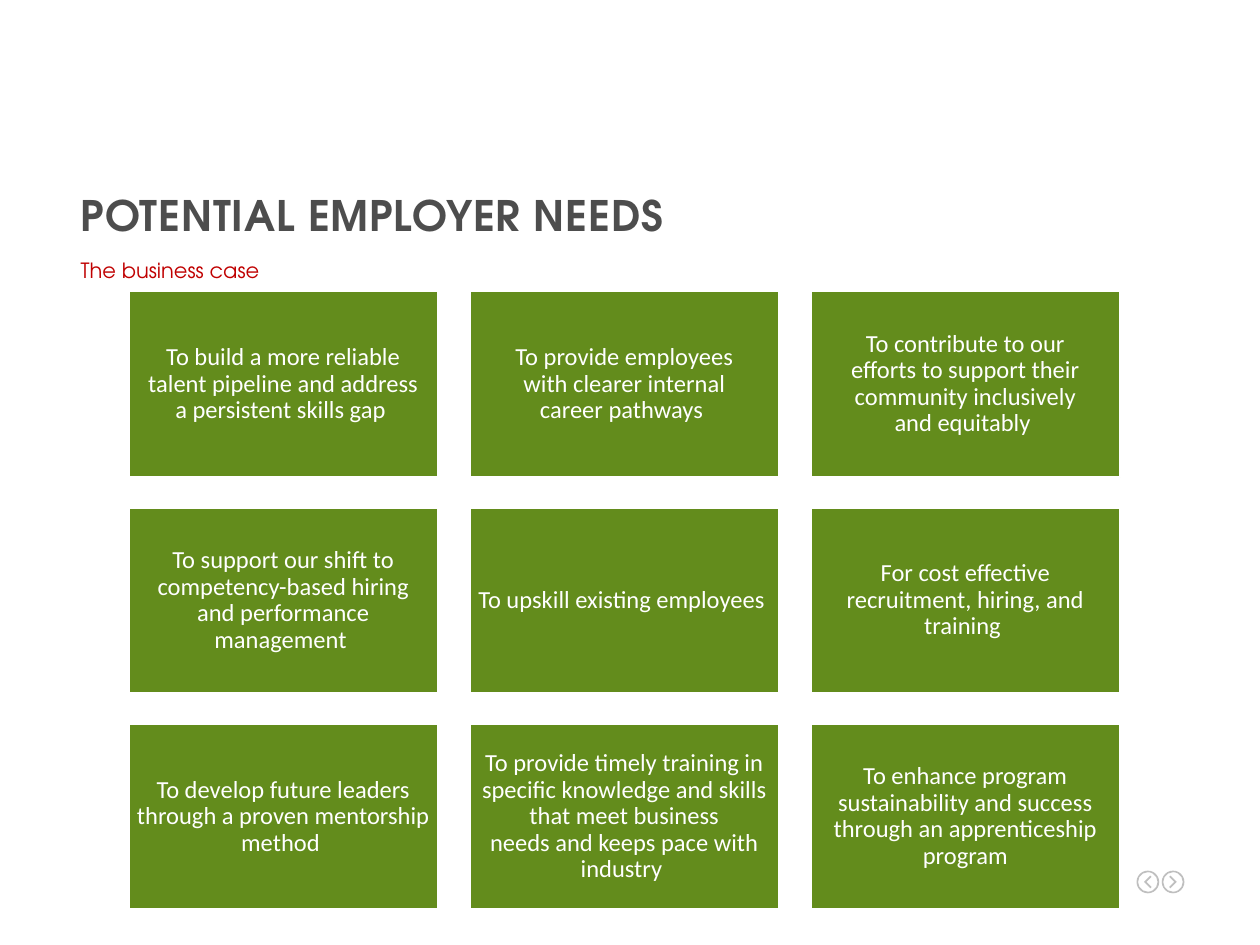
from pptx import Presentation
from pptx.dml.color import RGBColor
from pptx.enum.shapes import MSO_SHAPE
from pptx.enum.text import MSO_ANCHOR, MSO_AUTO_SIZE, PP_ALIGN
from pptx.util import Inches, Pt

HEADING_FONT = "TeX Gyre Adventor"
BODY_FONT = "Calibri"
GREEN, WHITE, GREY, RED, SILVER = "638C1C", "FFFFFF", "4D4D4D", "C00000", "BFBFBF"

HARD_SPACE_MARK = "~"
NEEDS = [
    "To build~a more reliable talent pipeline~and~address a~persistent skills~gap~",
    "To provide employees with~clearer~internal career~pathways~",
    "To contribute to~our efforts~to support their community inclusively and~equitably~",
    "To support~our~shift to competency-based hiring and performance management~",
    "To upskill existing employees~",
    "For cost effective recruitment, hiring, and training~",
    "To develop future leaders through~a proven mentorship method~",
    "To provide~timely training in specific~knowledge~and skills that meet business "
    "needs~and keeps pace with industry~",
    "To enhance program sustainability and success through an~apprenticeship program",
]
CHEVRON = [(-0.03, -0.04), (0.01, 0), (-0.03, 0.04), (-0.02, 0.05), (0.03, 0), (-0.02, -0.05)]


def color(value):
    """Turn a hex string into a colour."""
    return RGBColor.from_string(value)


def paint(shape, fill, line=None):
    """Give a shape a flat fill and an optional outline."""
    shape.shadow.inherit = False
    shape.fill.solid()
    shape.fill.fore_color.rgb = color(fill)
    if line:
        shape.line.color.rgb = color(line)
        shape.line.width = Pt(1.5)
    else:
        shape.line.fill.background()


def write(shape, text, font, size, hex_color, align, anchor, inset=0, bold=False):
    """Write one formatted paragraph into a shape and return it with its run."""
    frame = shape.text_frame
    frame.word_wrap = True
    frame.auto_size = MSO_AUTO_SIZE.NONE
    frame.vertical_anchor = anchor
    frame.margin_left = frame.margin_right = Inches(inset)
    frame.margin_top = frame.margin_bottom = Inches(inset)
    para = frame.paragraphs[0]
    para.alignment = align
    span = para.add_run()
    span.text = text
    span.font.name = font
    span.font.size = Pt(size)
    span.font.bold = bold
    span.font.color.rgb = color(hex_color)
    return para, span


def add_heading(page, left, top, width):
    """Place the title and the subtitle under it."""
    title = page.shapes.title
    title.left, title.top = Inches(left), Inches(top)
    title.width, title.height = Inches(width), Inches(0.56)
    para, span = write(title, "POTENTIAL EMPLOYER NEEDS", HEADING_FONT, 24, GREY,
                       PP_ALIGN.LEFT, MSO_ANCHOR.TOP, bold=True)
    span.font._element.set("spc", "50")

    subtitle = page.shapes.add_textbox(Inches(left), Inches(top + 0.58), Inches(width), Inches(0.21))
    para, span = write(subtitle, "The business case", HEADING_FONT, 12, RED,
                       PP_ALIGN.LEFT, MSO_ANCHOR.TOP)
    para.line_spacing = Pt(12)


def add_needs(page, left, top, width, height, columns=3, gap_x=0.25, gap_y=0.24):
    """Fill a box with an even grid of tiles, one for each need."""
    rows = len(NEEDS) // columns
    tile_width = (width - gap_x * (columns - 1)) / columns
    tile_height = (height - gap_y * (rows - 1)) / rows
    for index, need in enumerate(NEEDS):
        row, column = divmod(index, columns)
        tile = page.shapes.add_shape(
            MSO_SHAPE.RECTANGLE,
            Inches(left + column * (tile_width + gap_x)),
            Inches(top + row * (tile_height + gap_y)),
            Inches(tile_width), Inches(tile_height))
        paint(tile, GREEN, WHITE)
        para, span = write(tile, need.replace(HARD_SPACE_MARK, chr(160)), BODY_FONT, 14, WHITE,
                           PP_ALIGN.CENTER, MSO_ANCHOR.MIDDLE, inset=0.06)
        para.line_spacing = 0.9


def add_arrow_button(page, left, top, size, direction):
    """Draw a ring with a chevron that points right (1) or left (-1)."""
    ring = page.shapes.add_shape(MSO_SHAPE.DONUT, Inches(left), Inches(top), Inches(size), Inches(size))
    ring.adjustments[0] = 0.07
    paint(ring, SILVER)
    center_x, center_y = left + size / 2, top + size / 2
    points = [(Inches(center_x + direction * x), Inches(center_y + y)) for x, y in CHEVRON]
    builder = page.shapes.build_freeform(*points[0])
    builder.add_line_segments(points[1:], close=True)
    paint(builder.convert_to_shape(), SILVER)


def main():
    """Build the slide and save the deck."""
    deck = Presentation()
    deck.slide_width, deck.slide_height = Inches(10), Inches(7.5)
    page = deck.slides.add_slide(deck.slide_layouts[5])
    add_arrow_button(page, 9.02, 6.91, 0.18, -1)
    add_arrow_button(page, 9.22, 6.91, 0.18, 1)
    add_heading(page, 0.64, 1.5, 8.7)
    add_needs(page, 1.02, 2.31, 7.87, 4.91)
    deck.save("out.pptx")


if __name__ == "__main__":
    main()
